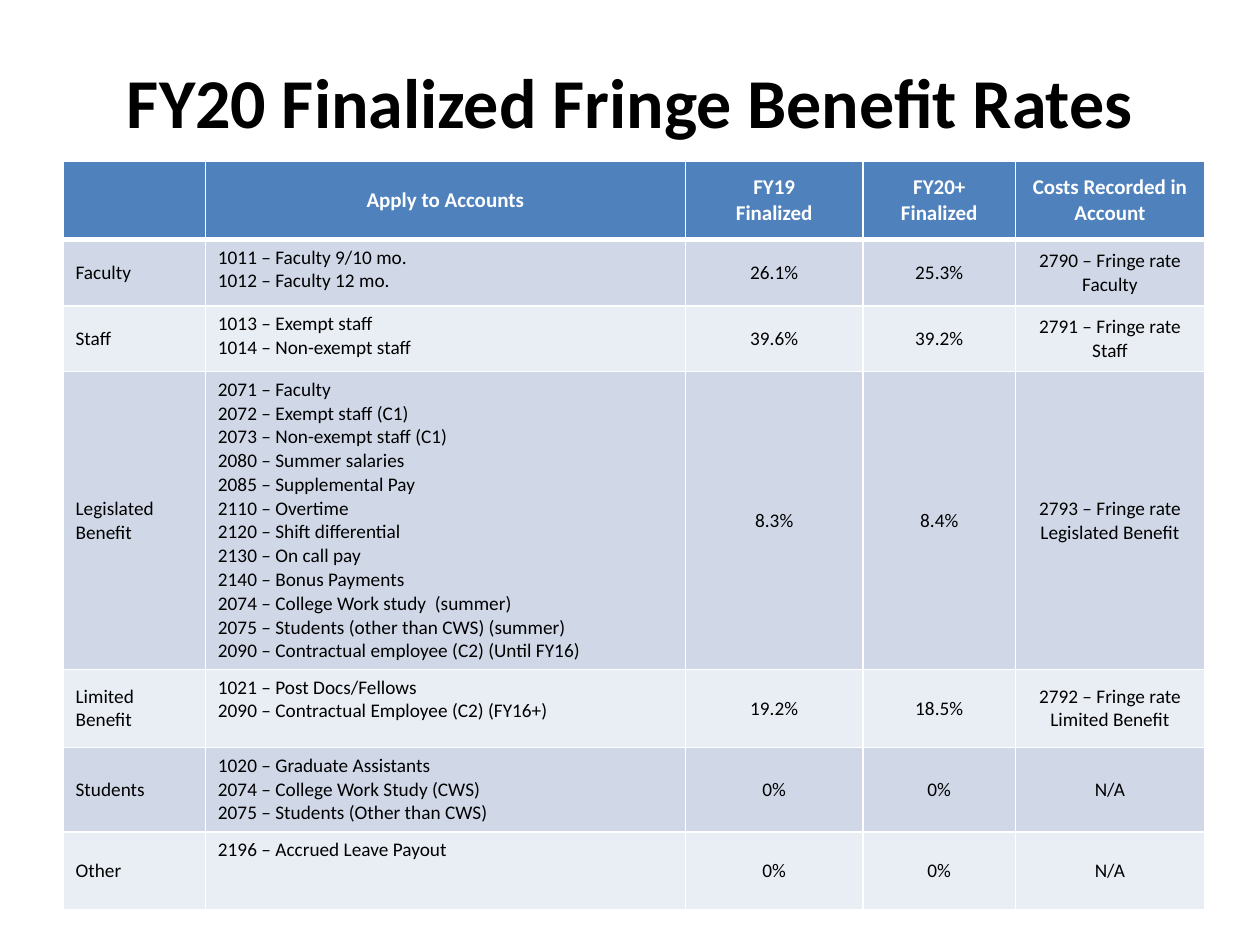
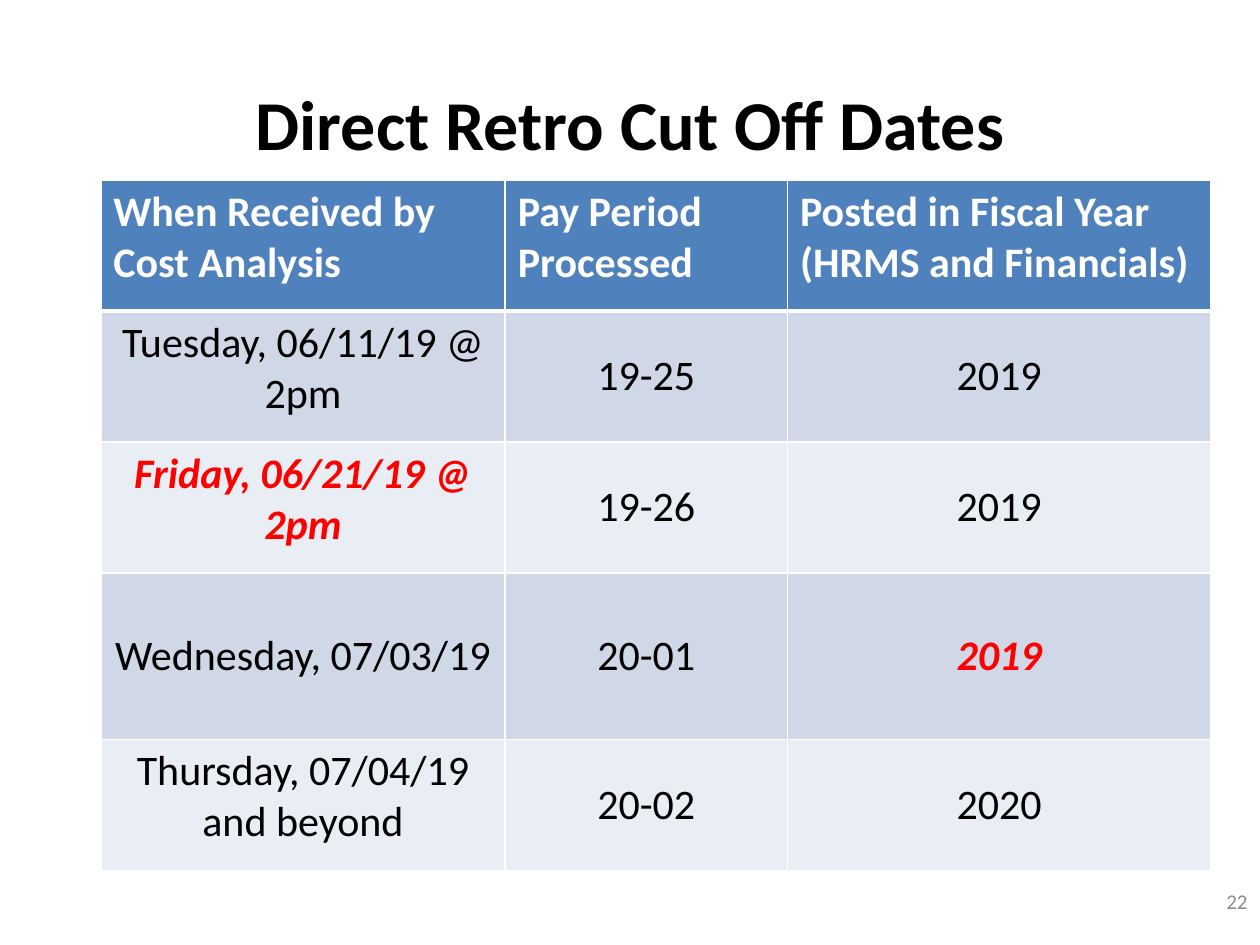
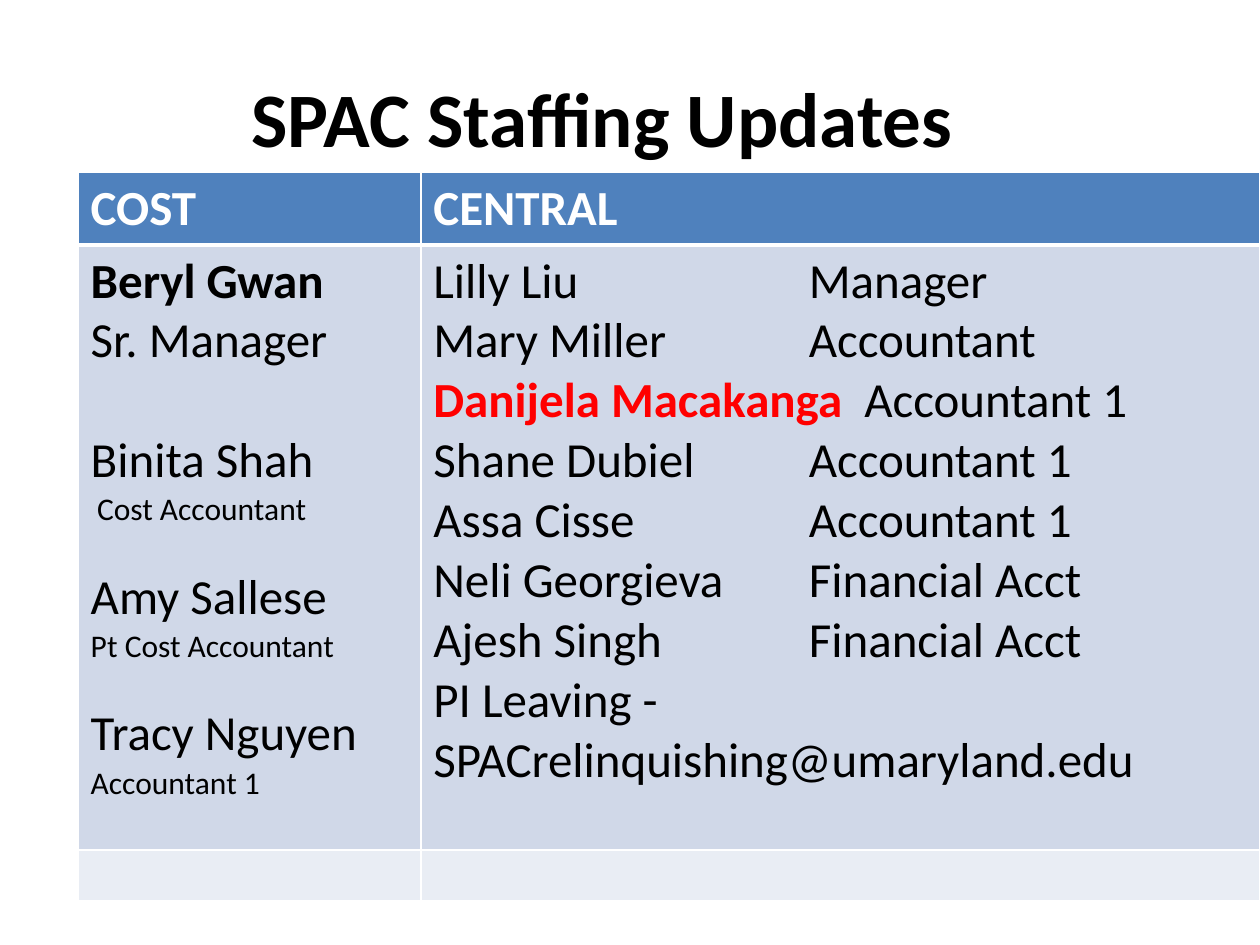
from dataclasses import dataclass
from typing import NamedTuple

from lxml import etree
from pptx import Presentation
from pptx.dml.color import RGBColor
from pptx.enum import text as t
from pptx.oxml.ns import qn
from pptx.util import Inches, Pt

FONT = "Calibri"
BLACK = RGBColor(0x00, 0x00, 0x00)
WHITE = RGBColor(0xFF, 0xFF, 0xFF)
RED = RGBColor(0xFF, 0x00, 0x00)
GRAY = RGBColor(0x8C, 0x8C, 0x8C)
BLUE = RGBColor(0x4F, 0x81, 0xBD)
BANDS = (RGBColor(0xD0, 0xD8, 0xE8), RGBColor(0xE9, 0xED, 0xF4))

LEFT, CENTER, RIGHT = t.PP_ALIGN.LEFT, t.PP_ALIGN.CENTER, t.PP_ALIGN.RIGHT
TOP, MIDDLE = t.MSO_ANCHOR.TOP, t.MSO_ANCHOR.MIDDLE
TITLE_ONLY = 5
ROLE_TABS = (2.98, 3.42)


class Line(NamedTuple):
    """One paragraph of a cell; a role follows the text after a tab."""
    text: str
    role: str = ""
    size: float = 0
    color: RGBColor = BLACK
    bold: bool = False
    italic: bool = False
    before: float = 0
    indent: float = 0
    anchor: t.MSO_ANCHOR | None = None


class Column(NamedTuple):
    width: float
    align: t.PP_ALIGN = LEFT
    anchor: t.MSO_ANCHOR = TOP


class Heading(NamedTuple):
    text: str
    left: float
    top: float
    width: float
    height: float
    size: float = 40


@dataclass
class Grid:
    left: float
    top: float
    columns: list[Column]
    heights: list[float]
    head: list[str]
    body: list[list]
    head_size: float
    size: float
    head_align: t.PP_ALIGN = LEFT
    head_anchor: t.MSO_ANCHOR = TOP


def style(font, size: float, color: RGBColor, bold: bool = False, italic: bool = False) -> None:
    font.name = FONT
    font.size = Pt(size)
    font.color.rgb = color
    font.bold = bold
    font.italic = italic


def add_title(slide, head: Heading) -> None:
    title = slide.shapes.title
    title.left, title.top = Inches(head.left), Inches(head.top)
    title.width, title.height = Inches(head.width), Inches(head.height)
    frame = title.text_frame
    frame.text = head.text
    frame.auto_size = t.MSO_AUTO_SIZE.NONE
    frame.vertical_anchor = MIDDLE
    para = frame.paragraphs[0]
    para.alignment = CENTER
    style(para.font, head.size, BLACK, bold=True)


def add_number(slide, number: str) -> None:
    box = slide.shapes.add_textbox(Inches(7.67), Inches(6.95), Inches(2.33), Inches(0.4))
    frame = box.text_frame
    frame.word_wrap = True
    frame.vertical_anchor = MIDDLE
    frame.text = number
    para = frame.paragraphs[0]
    para.alignment = RIGHT
    style(para.font, 12, GRAY)


def add_borders(cell, row: int) -> None:
    """White rules, heavier between the heading and the first body row."""
    heavy = {0: "lnB", 1: "lnT"}.get(row)
    props = cell._tc.get_or_add_tcPr()
    for side in ("lnL", "lnR", "lnT", "lnB"):
        width = Pt(3 if side == heavy else 1)
        line = etree.SubElement(props, qn(f"a:{side}"), w=str(width))
        fill = etree.SubElement(line, qn("a:solidFill"))
        etree.SubElement(fill, qn("a:srgbClr"), val=str(WHITE))


def add_tabs(para) -> None:
    tabs = etree.SubElement(para._p.get_or_add_pPr(), qn("a:tabLst"))
    for stop in ROLE_TABS:
        etree.SubElement(tabs, qn("a:tab"), pos=str(Inches(stop)), algn="l")


def write(para, line: Line, size: float, align: t.PP_ALIGN) -> None:
    if line.role:
        add_tabs(para)
    if line.indent:
        para._p.get_or_add_pPr().set("marL", str(Inches(line.indent)))
    if line.before:
        para.space_before = Pt(line.before)
    para.alignment = align
    run = para.add_run()
    run.text = line.text
    size = line.size or size
    if line.role:
        para.add_run().text = "\t" + line.role
        style(para.font, size, BLACK)
        if line.color != BLACK:
            style(run.font, size, line.color, line.bold, line.italic)
    else:
        style(para.font, size, line.color, line.bold, line.italic)


def fill_cell(cell, lines: list[Line], size: float, align: t.PP_ALIGN, anchor: t.MSO_ANCHOR) -> None:
    cell.vertical_anchor = anchor
    frame = cell.text_frame
    for i, line in enumerate(lines):
        para = frame.add_paragraph() if i else frame.paragraphs[0]
        write(para, line, size, align)


def as_lines(entry, color: RGBColor = BLACK, bold: bool = False) -> list[Line]:
    if isinstance(entry, Line):
        return [entry]
    if isinstance(entry, str):
        return [Line(part, color=color, bold=bold) for part in entry.splitlines()]
    return entry


def add_grid(slide, grid: Grid) -> None:
    width = sum(col.width for col in grid.columns)
    shape = slide.shapes.add_table(
        len(grid.heights), len(grid.columns), Inches(grid.left), Inches(grid.top),
        Inches(width), Inches(sum(grid.heights)))
    table = shape.table
    for c, col in enumerate(grid.columns):
        table.columns[c].width = Inches(col.width)
    for r, height in enumerate(grid.heights):
        table.rows[r].height = Inches(height)
    for r, row in enumerate([grid.head, *grid.body]):
        for c, entry in enumerate(row):
            cell, col = table.cell(r, c), grid.columns[c]
            add_borders(cell, r)
            cell.fill.solid()
            cell.fill.fore_color.rgb = BANDS[(r - 1) % 2] if r else BLUE
            if r:
                lines = as_lines(entry)
                anchor = (lines and lines[0].anchor) or col.anchor
                fill_cell(cell, lines, grid.size, col.align, anchor)
            else:
                fill_cell(cell, as_lines(entry, WHITE, True), grid.head_size,
                          grid.head_align, grid.head_anchor)


RATES = Grid(
    left=0.5, top=1.28, head_size=12, size=11, head_align=CENTER, head_anchor=MIDDLE,
    columns=[Column(1.13, LEFT, MIDDLE), Column(3.81), Column(1.41, CENTER, MIDDLE),
             Column(1.21, CENTER, MIDDLE), Column(1.5, CENTER, MIDDLE)],
    heights=[0.62, 0.53, 0.52, 2.36, 0.62, 0.67, 0.62],
    head=["", "Apply to Accounts", "FY19\nFinalized", "FY20+ Finalized",
          "Costs Recorded in Account"],
    body=[
        ["Faculty", "1011 – Faculty 9/10 mo.\n1012 – Faculty 12 mo.",
         "26.1%", "25.3%", "2790 – Fringe rate Faculty"],
        ["Staff", "1013 – Exempt staff\n1014 – Non-exempt staff",
         "39.6%", "39.2%", "2791 – Fringe rate Staff"],
        ["Legislated Benefit",
         "2071 – Faculty\n"
         "2072 – Exempt staff (C1)\n"
         "2073 – Non-exempt staff (C1)\n"
         "2080 – Summer salaries\n"
         "2085 – Supplemental Pay\n"
         "2110 – Overtime\n"
         "2120 – Shift differential\n"
         "2130 – On call pay\n"
         "2140 – Bonus Payments\n"
         "2074 – College Work study  (summer)\n"
         "2075 – Students (other than CWS) (summer)\n"
         "2090 – Contractual employee (C2) (Until FY16)",
         "8.3%", "8.4%", "2793 – Fringe rate Legislated Benefit"],
        ["Limited Benefit",
         "1021 – Post Docs/Fellows\n2090 – Contractual Employee (C2) (FY16+)",
         "19.2%", "18.5%", "2792 – Fringe rate Limited Benefit"],
        ["Students",
         "1020 – Graduate Assistants\n"
         "2074 – College Work Study (CWS)\n"
         "2075 – Students (Other than CWS)",
         "0%", "0%", "N/A"],
        ["Other", "2196 – Accrued Leave Payout", "0%", "0%", "N/A"],
    ])

ALERT = {"color": RED, "bold": True, "italic": True}
DATES = Grid(
    left=0.8, top=1.43, head_size=24, size=24,
    columns=[Column(3.21, CENTER), Column(2.24, CENTER, MIDDLE), Column(3.36, CENTER, MIDDLE)],
    heights=[1.04, 1.04, 1.04, 1.32, 1.04],
    head=["When Received by Cost Analysis", "Pay Period Processed",
          "Posted in Fiscal Year (HRMS and Financials)"],
    body=[
        ["Tuesday, 06/11/19 @ 2pm", "19-25", "2019"],
        [Line("Friday, 06/21/19 @ 2pm", **ALERT), "19-26", "2019"],
        [Line("Wednesday, 07/03/19", anchor=MIDDLE), "20-01", Line("2019", **ALERT)],
        ["Thursday, 07/04/19 and beyond", "20-02", "2020"],
    ])

STAFF = Grid(
    left=0.62, top=1.37, head_size=28, size=28,
    columns=[Column(2.72), Column(6.66)],
    heights=[0.55, 4.8, 0.4],
    head=["COST", "CENTRAL"],
    body=[
        [[Line("Beryl Gwan", bold=True),
          Line("Sr. Manager"),
          Line("Binita Shah", before=34),
          Line("Cost Accountant", size=18, indent=0.05),
          Line("Amy Sallese", before=22),
          Line("Pt Cost Accountant", size=18),
          Line("Tracy Nguyen", before=22),
          Line("Accountant 1", size=18)],
         [Line("Lilly Liu", "Manager"),
          Line("Mary Miller", "Accountant"),
          Line("Danijela Macakanga", "Accountant 1", color=RED, bold=True),
          Line("Shane Dubiel", "Accountant 1"),
          Line("Assa Cisse", "Accountant 1"),
          Line("Neli Georgieva", "Financial Acct"),
          Line("Ajesh Singh", "Financial Acct"),
          Line("PI Leaving - SPACrelinquishing@umaryland.edu")]],
        ["", ""],
    ])

PAGES = [
    (Heading("FY20 Finalized Fringe Benefit Rates", 0.5, 0.34, 9, 0.92), RATES, ""),
    (Heading("Direct Retro Cut Off Dates", 0.5, 0.51, 9, 0.92), DATES, "22"),
    (Heading("SPAC Staffing Updates", 0.5, 0.3, 8.56, 1.25, 44), STAFF, ""),
]


def main() -> None:
    deck = Presentation()
    deck.slide_width, deck.slide_height = Inches(10), Inches(7.5)
    for head, grid, number in PAGES:
        slide = deck.slides.add_slide(deck.slide_layouts[TITLE_ONLY])
        add_title(slide, head)
        if number:
            add_number(slide, number)
        add_grid(slide, grid)
    deck.save("out.pptx")


if __name__ == "__main__":
    main()
